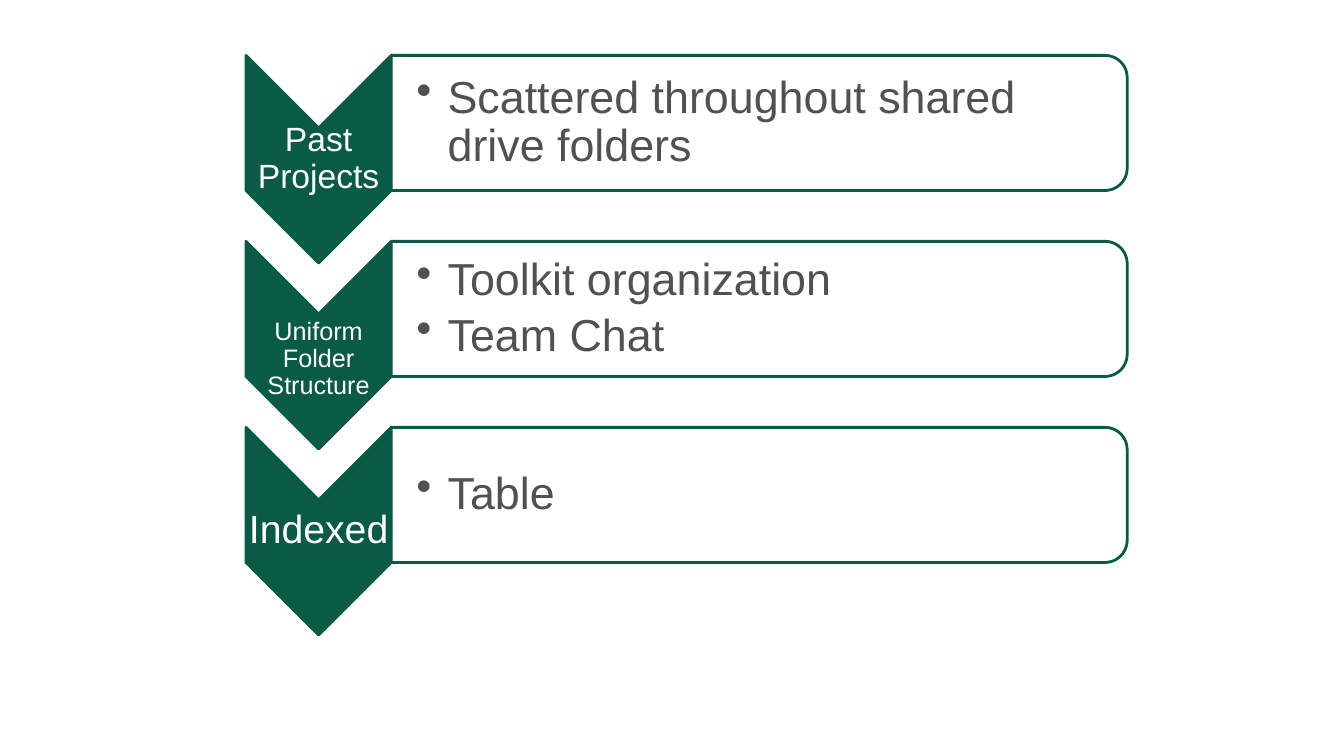
import math

from lxml import etree
from pptx import Presentation
from pptx.dml.color import RGBColor
from pptx.enum.text import MSO_ANCHOR, PP_ALIGN
from pptx.oxml.ns import qn
from pptx.util import Inches, Pt

CENTER, LEFT = PP_ALIGN.CENTER, PP_ALIGN.LEFT
MIDDLE = MSO_ANCHOR.MIDDLE
GREEN, WHITE, GRAY = "0A5B45", "FFFFFF", "515151"
FONT = "Arial"

CHEVRON_LEFT, PANEL_LEFT, PANEL_RIGHT = 2.44, 3.88, 11.18
FIRST_TOP, ROW_STEP = 0.55, 1.845
PANEL_HEIGHT, POINT_DEPTH, CORNER_RADIUS = 1.34, 0.72, 0.22
CORNER_STEPS = 12

STAGES = [
    ("Past Projects", 24, 0, ["Scattered throughout shared drive folders"]),
    ("Uniform Folder Structure", 18, 0.14, ["Toolkit organization", "Team Chat"]),
    ("Indexed", 28, 0, ["Table"]),
]


def color(value):
    """Return the colour for a hex string."""
    return RGBColor.from_string(value)


def add_outline(slide, points, fill, opacity=100):
    """Add a closed green-edged shape through points given in inches."""
    corners = [(Inches(x), Inches(y)) for x, y in points]
    builder = slide.shapes.build_freeform(*corners[0], scale=1.0)
    builder.add_line_segments(corners[1:], close=True)
    shape = builder.convert_to_shape()
    shape.shadow.inherit = False
    shape.fill.solid()
    shape.fill.fore_color.rgb = color(fill)
    if opacity < 100:
        fill_element = shape.fill._xPr.find(f"{qn('a:solidFill')}/{qn('a:srgbClr')}")
        etree.SubElement(fill_element, qn("a:alpha"), val=str(opacity * 1000))
    shape.line.color.rgb = color(GREEN)
    shape.line.width = Pt(2)
    etree.SubElement(shape.line._get_or_add_ln(), qn("a:round"))
    return shape


def prepare_frame(shape, left, top, right, bottom):
    """Set the wrapping, anchor and margins of a shape's text frame."""
    frame = shape.text_frame
    frame.word_wrap = True
    frame.vertical_anchor = MIDDLE
    frame.margin_left, frame.margin_right = Inches(left), Inches(right)
    frame.margin_top, frame.margin_bottom = Inches(top), Inches(bottom)
    return frame


def write_paragraph(paragraph, text, size, font_color, alignment):
    """Write one run with tight line spacing into a paragraph."""
    paragraph.alignment = alignment
    paragraph.line_spacing = 0.9
    run = paragraph.add_run()
    run.text = text
    run.font.name = FONT
    run.font.size = Pt(size)
    run.font.color.rgb = color(font_color)


def add_bullet(paragraph):
    """Give a paragraph a hanging round bullet."""
    properties = paragraph._p.get_or_add_pPr()
    properties.set("marL", str(Inches(0.31)))
    properties.set("indent", str(-Inches(0.31)))
    etree.SubElement(properties, qn("a:buChar"), char="•")


def add_chevron(slide, top, label, size, text_shift):
    """Add a downward chevron holding a stage label."""
    middle = (CHEVRON_LEFT + PANEL_LEFT) / 2
    bottom = top + PANEL_HEIGHT
    points = [
        (PANEL_LEFT, top), (PANEL_LEFT, bottom),
        (middle, bottom + POINT_DEPTH), (CHEVRON_LEFT, bottom),
        (CHEVRON_LEFT, top), (middle, top + POINT_DEPTH),
    ]
    shape = add_outline(slide, points, GREEN)
    frame = prepare_frame(shape, 0.02, 0.74 + text_shift, 0.02, 0.74 - text_shift)
    write_paragraph(frame.paragraphs[0], label, size, WHITE, CENTER)


def corner_points(center_y, start_angle):
    """Return points along a quarter circle at the panel's right end."""
    center_x = PANEL_RIGHT - CORNER_RADIUS
    angles = [start_angle + math.pi / 2 * step / CORNER_STEPS
              for step in range(CORNER_STEPS + 1)]
    return [(center_x + CORNER_RADIUS * math.cos(angle),
             center_y + CORNER_RADIUS * math.sin(angle)) for angle in angles]


def add_panel(slide, top, items):
    """Add a panel with rounded right corners and bulleted items."""
    bottom = top + PANEL_HEIGHT
    points = [
        (PANEL_LEFT, top),
        *corner_points(top + CORNER_RADIUS, -math.pi / 2),
        *corner_points(bottom - CORNER_RADIUS, 0),
        (PANEL_LEFT, bottom),
    ]
    shape = add_outline(slide, points, WHITE, opacity=90)
    frame = prepare_frame(shape, 0.25, 0.09, 0.09, 0.09)
    for index, item in enumerate(items):
        paragraph = frame.add_paragraph() if index else frame.paragraphs[0]
        add_bullet(paragraph)
        if index:
            paragraph.space_before = Pt(5)
        write_paragraph(paragraph, item, 32, GRAY, LEFT)


def main():
    """Build the slide and save it."""
    presentation = Presentation()
    presentation.slide_width = Inches(13.33)
    presentation.slide_height = Inches(7.5)
    slide = presentation.slides.add_slide(presentation.slide_layouts[6])
    for row, (label, size, text_shift, items) in enumerate(STAGES):
        top = FIRST_TOP + row * ROW_STEP
        add_chevron(slide, top, label, size, text_shift)
        add_panel(slide, top, items)
    presentation.save("out.pptx")


if __name__ == "__main__":
    main()
